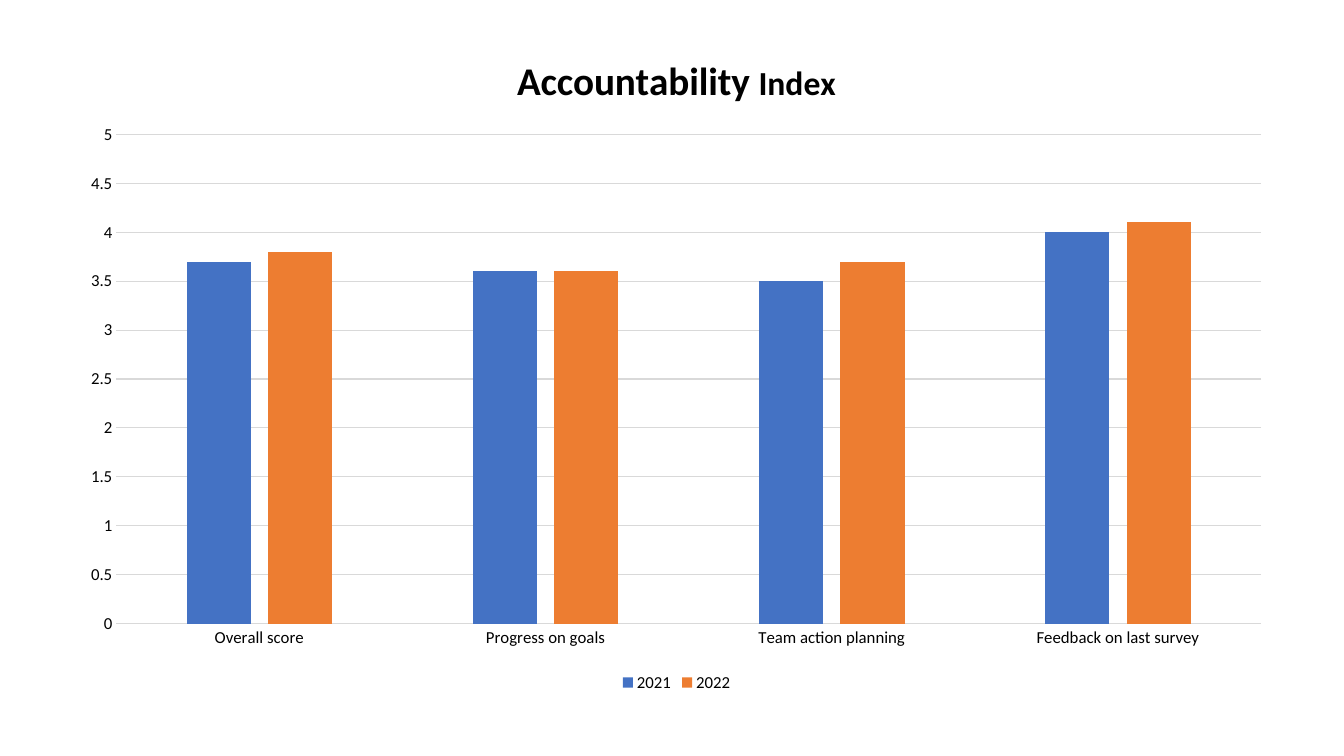
from typing import Any, NamedTuple

from lxml import etree
from pptx import Presentation
from pptx import util as u
from pptx.chart.data import CategoryChartData
from pptx.dml.color import RGBColor
from pptx.enum import chart as kinds

BLACK = RGBColor(0x00, 0x00, 0x00)
GRID_GRAY = RGBColor(0xD9, 0xD9, 0xD9)
BLUE = RGBColor(0x44, 0x72, 0xC4)
ORANGE = RGBColor(0xED, 0x7D, 0x31)
CHART_NS = "http://schemas.openxmlformats.org/drawingml/2006/chart"


class YearScores(NamedTuple):
    year: str
    scores: tuple[float, ...]
    color: RGBColor


class TitlePart(NamedTuple):
    words: str
    size: int


QUESTIONS = ("Overall score", "Progress on goals",
             "Team action planning", "Feedback on last survey")
YEARS = (
    YearScores("2021", (3.7, 3.6, 3.5, 4), BLUE),
    YearScores("2022", (3.8, 3.6, 3.7, 4.1), ORANGE),
)
TITLE_PARTS = (TitlePart("Accountability ", 28), TitlePart("Index", 24))
LABEL_FORMAT = {"name": "Calibri", "size": u.Pt(12), "bold": False}


def set_format(target: Any, values: dict[str, Any]) -> None:
    for name, value in values.items():
        setattr(target, name, value)


def style_font(font: Any, values: dict[str, Any]) -> None:
    set_format(font, values)
    font.color.rgb = BLACK


def style_line(line: Any) -> None:
    line.color.rgb = GRID_GRAY
    line.width = u.Pt(0.75)


def place_plot(chart: Any, fractions: dict[str, float]) -> None:
    """Fix the inner plot area as fractions of the chart's size."""
    plot_area = chart.plots[0]._element.getparent()
    for old in plot_area.findall(f"{{{CHART_NS}}}layout"):
        plot_area.remove(old)
    layout = etree.Element(f"{{{CHART_NS}}}layout")
    manual = etree.SubElement(layout, f"{{{CHART_NS}}}manualLayout")
    settings = {"layoutTarget": "inner", "xMode": "edge", "yMode": "edge"}
    for name, value in (settings | fractions).items():
        etree.SubElement(manual, f"{{{CHART_NS}}}{name}", val=str(value))
    plot_area.insert(0, layout)


def add_title(chart: Any) -> None:
    chart.has_title = True
    chart.chart_title.include_in_layout = False
    para = chart.chart_title.text_frame.paragraphs[0]
    for part in TITLE_PARTS:
        span = para.add_run()
        span.text = part.words
        style_font(span.font, {"name": "Calibri", "size": u.Pt(part.size), "bold": True})


def style_axes(chart: Any) -> None:
    for axis in (chart.category_axis, chart.value_axis):
        set_format(axis, {"major_tick_mark": kinds.XL_TICK_MARK.NONE,
                          "minor_tick_mark": kinds.XL_TICK_MARK.NONE})
        style_font(axis.tick_labels.font, LABEL_FORMAT)
    style_line(chart.category_axis.format.line)
    chart.value_axis.format.line.fill.background()
    set_format(chart.value_axis, {"minimum_scale": 0, "maximum_scale": 5,
                                  "major_unit": 0.5, "has_major_gridlines": True})
    style_line(chart.value_axis.major_gridlines.format.line)


def add_index_chart(page: Any) -> None:
    data = CategoryChartData()
    data.categories = QUESTIONS
    for entry in YEARS:
        data.add_series(entry.year, entry.scores)
    chart = page.shapes.add_chart(
        kinds.XL_CHART_TYPE.COLUMN_CLUSTERED, u.Inches(0.67), u.Inches(0.35),
        u.Inches(12.08), u.Inches(6.56), data).chart
    style_font(chart.font, {"name": "Calibri", "size": u.Pt(10)})
    add_title(chart)
    style_axes(chart)

    plot = chart.plots[0]
    set_format(plot, {"gap_width": 219, "overlap": -27, "vary_by_categories": False})
    for series, entry in zip(plot.series, YEARS):
        series.format.fill.solid()
        series.format.fill.fore_color.rgb = entry.color
    place_plot(chart, {"x": 0.04, "y": 0.15, "w": 0.94, "h": 0.74})

    chart.has_legend = True
    set_format(chart.legend, {"position": kinds.XL_LEGEND_POSITION.BOTTOM,
                              "include_in_layout": False})
    style_font(chart.legend.font, LABEL_FORMAT)


def main() -> None:
    deck = Presentation()
    set_format(deck, {"slide_width": u.Inches(13.33), "slide_height": u.Inches(7.5)})
    page = deck.slides.add_slide(deck.slide_layouts[6])
    add_index_chart(page)
    deck.save("out.pptx")


if __name__ == "__main__":
    main()
